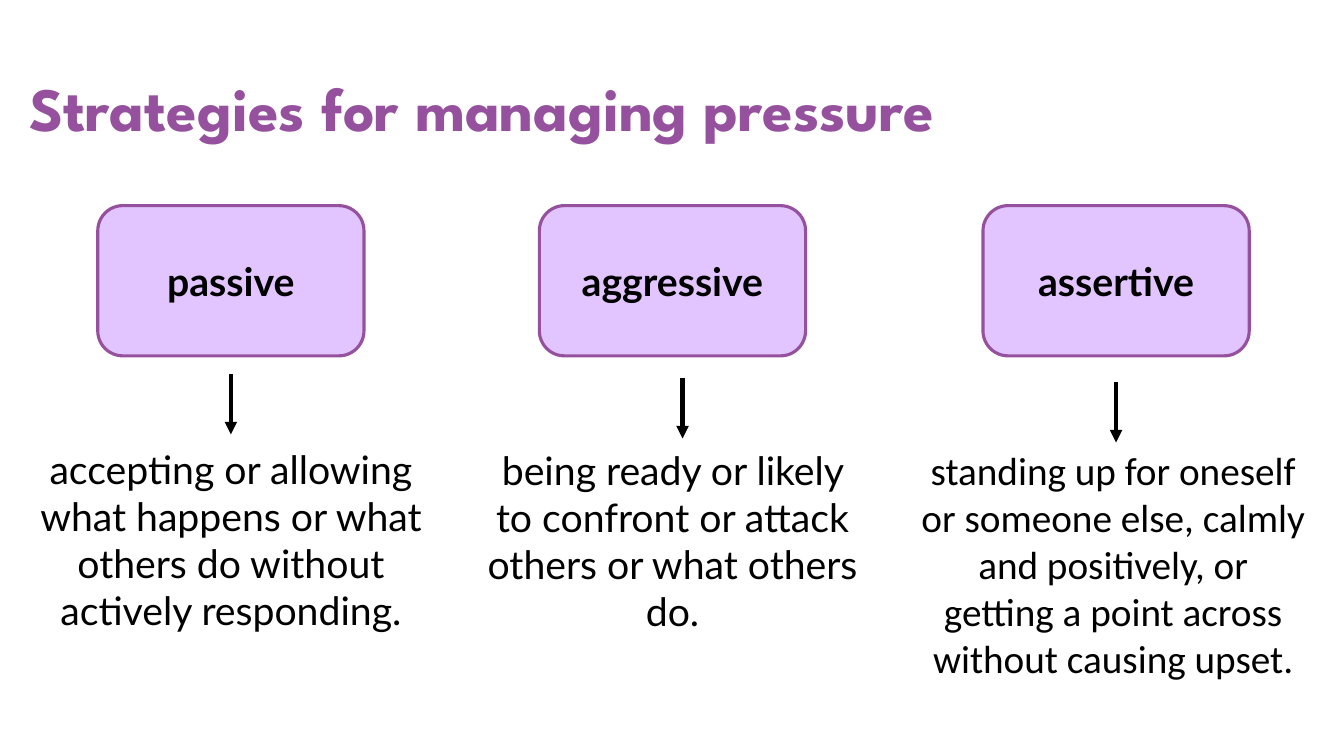
from dataclasses import dataclass

from lxml import etree
from pptx import Presentation
from pptx.dml.color import RGBColor
from pptx.enum import shapes, text
from pptx.oxml import ns
from pptx.util import Inches, Pt


@dataclass(frozen=True)
class Theme:
    purple: RGBColor = RGBColor.from_string("95519E")
    lilac: RGBColor = RGBColor.from_string("E2C5FF")
    black: RGBColor = RGBColor.from_string("000000")
    white: RGBColor = RGBColor.from_string("FFFFFF")
    title_font: str = "League Spartan"
    body_font: str = "Lato"
    last_font: str = "Calibri"
    title_size: Pt = Pt(44)
    body_size: Pt = Pt(28)


theme = Theme()


def write(shape, words, font, size, color, bold, align, anchor):
    frame = shape.text_frame
    frame.word_wrap = True
    frame.vertical_anchor = anchor
    para = frame.paragraphs[0]
    para.text = words
    para.alignment = align
    para.font.name = font
    para.font.size = size
    para.font.color.rgb = color
    para.font.bold = bold


deck = Presentation()
deck.slide_width = Inches(13.33)
deck.slide_height = Inches(7.5)
page = deck.slides.add_slide(deck.slide_layouts[5])
page.background.fill.solid()
page.background.fill.fore_color.rgb = theme.white

title = page.shapes.title
title.left, title.top = Inches(0.19), Inches(0.64)
title.width, title.height = Inches(13.14), Inches(0.84)
write(title, "Strategies for managing pressure", theme.title_font, theme.title_size,
      theme.purple, True, text.PP_ALIGN.LEFT, text.MSO_ANCHOR.TOP)
title.text_frame.auto_size = text.MSO_AUTO_SIZE.NONE

strategies = [
    ("passive", 0.97, 2.29, 3.71, 0.28, 4.37, 1.99, theme.body_font,
     "accepting or allowing what happens or what others do without actively responding."),
    ("aggressive", 5.35, 6.77, 3.75, 4.66, 4.38, 1.99, theme.body_font,
     "being ready or likely to confront or attack others or what others do."),
    ("assertive", 9.75, 11.07, 3.79, 9.03, 4.38, 2.46, theme.last_font,
     "standing up for oneself or someone else, calmly and positively, "
     "or getting a point across without causing upset."),
]

for name, box_x, arrow_x, arrow_y, meaning_x, meaning_y, meaning_h, font, meaning in strategies:
    box = page.shapes.add_shape(shapes.MSO_SHAPE.ROUNDED_RECTANGLE, Inches(box_x),
                                Inches(2.04), Inches(2.64), Inches(1.49))
    box.shadow.inherit = False
    box.fill.solid()
    box.fill.fore_color.rgb = theme.lilac
    box.line.color.rgb = theme.purple
    box.line.width = Pt(2.25)
    write(box, name, theme.body_font, theme.body_size, theme.black, True,
          text.PP_ALIGN.CENTER, text.MSO_ANCHOR.MIDDLE)

    arrow = page.shapes.add_connector(shapes.MSO_CONNECTOR.STRAIGHT, Inches(arrow_x),
                                      Inches(arrow_y), Inches(arrow_x), Inches(arrow_y + 0.6))
    arrow.line.color.rgb = theme.black
    arrow.line.width = Pt(3)
    etree.SubElement(arrow.line._get_or_add_ln(), ns.qn("a:tailEnd"), type="triangle")
    etree.SubElement(arrow._element.spPr, ns.qn("a:effectLst"))

    label = page.shapes.add_textbox(Inches(meaning_x), Inches(meaning_y),
                                    Inches(4.02), Inches(meaning_h))
    write(label, meaning, font, theme.body_size, theme.black, False,
          text.PP_ALIGN.CENTER, text.MSO_ANCHOR.TOP)
    label.text_frame.auto_size = text.MSO_AUTO_SIZE.SHAPE_TO_FIT_TEXT

deck.save("out.pptx")
